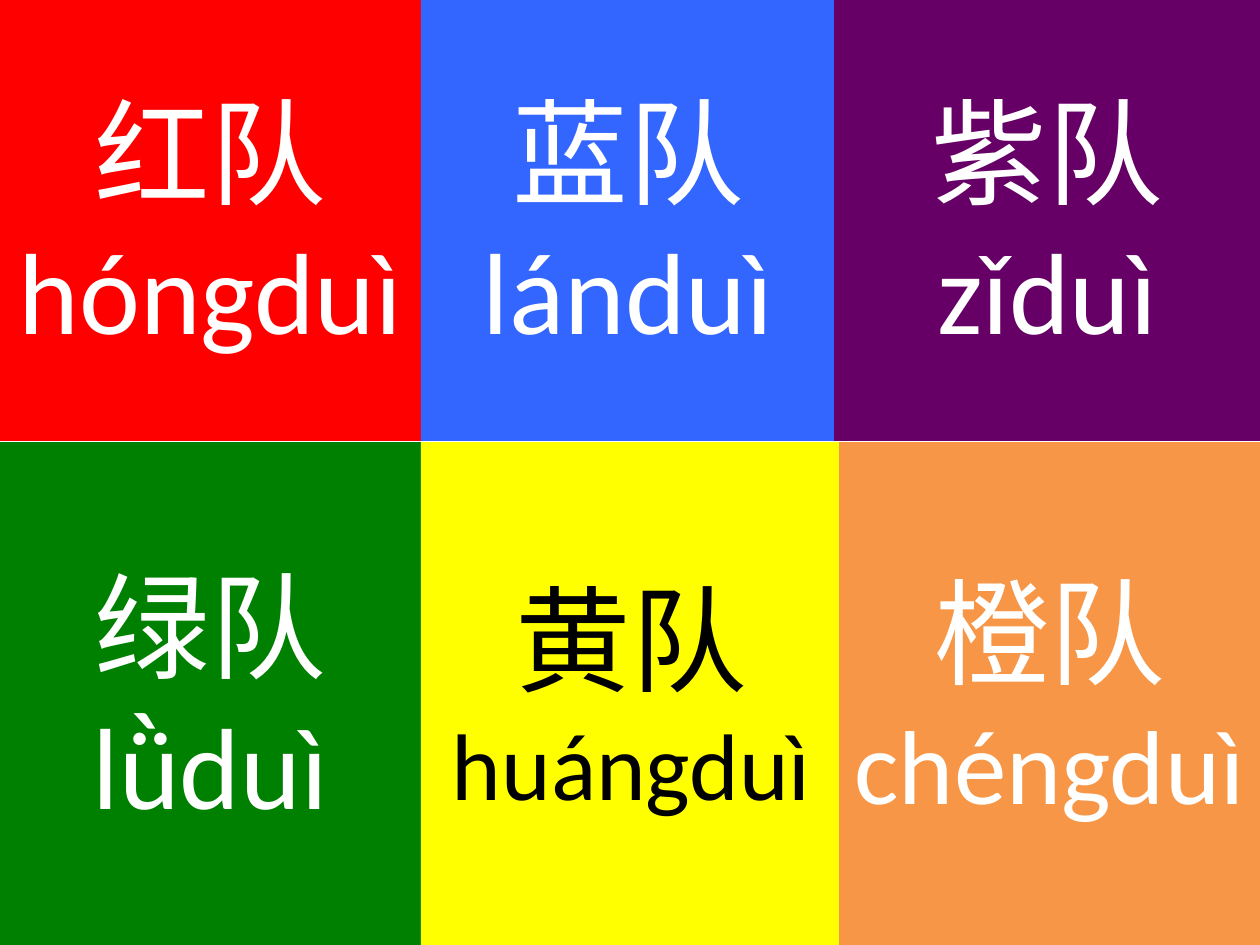
from pptx import Presentation
from pptx.dml.color import RGBColor
from pptx.enum.shapes import MSO_SHAPE
from pptx.enum.text import MSO_ANCHOR, PP_ALIGN
from pptx.util import Inches, Pt

COLORS = {
    "red": "FF0000",
    "blue": "3366FF",
    "purple": "660066",
    "green": "008000",
    "yellow": "FFFF00",
    "orange": "F79646",
    "white": "FFFFFF",
    "black": "000000",
}
NAME_SIZE = 66
TOP_ROW = (-0.02, 3.52)
BOTTOM_ROW = (3.51, 3.99)
TEAMS = [
    (TOP_ROW, 0, 3.34, "red", "white", "红队", "hóngduì", 66),
    (TOP_ROW, 3.34, 3.29, "blue", "white", "蓝队", "lánduì", 66),
    (TOP_ROW, 6.62, 3.38, "purple", "white", "紫队", "zǐduì", 66),
    (BOTTOM_ROW, 0, 3.34, "green", "white", "绿队", "lǜduì", 66),
    (BOTTOM_ROW, 3.34, 3.34, "yellow", "black", "黄队", "huángduì", 54),
    (BOTTOM_ROW, 6.66, 3.34, "orange", "white", "橙队", "chéngduì", 60),
]


def apply_format(target, values):
    """Set each attribute in values on the target."""
    for name, value in values.items():
        setattr(target, name, value)


def add_line(paragraph, text, size, color):
    """Write one centred line of text in the paragraph."""
    paragraph.alignment = PP_ALIGN.CENTER
    run = paragraph.add_run()
    run.text = text
    apply_format(run.font, {"name": "Calibri", "size": Pt(size)})
    run.font.color.rgb = RGBColor.from_string(COLORS[color])


def add_team_tile(slide, box, fill, text_color, lines):
    """Place a coloured tile with a team name and its pinyin in the box."""
    shape = slide.shapes.add_shape(MSO_SHAPE.RECTANGLE, *map(Inches, box))
    shape.shadow.inherit = False
    shape.fill.solid()
    shape.fill.fore_color.rgb = RGBColor.from_string(COLORS[fill])
    shape.line.fill.background()
    frame = shape.text_frame
    apply_format(frame, {"word_wrap": True, "vertical_anchor": MSO_ANCHOR.MIDDLE})
    for index, (text, size) in enumerate(lines):
        paragraph = frame.add_paragraph() if index else frame.paragraphs[0]
        add_line(paragraph, text, size, text_color)


def main():
    """Build the slide of six team tiles and save it."""
    presentation = Presentation()
    apply_format(
        presentation, {"slide_width": Inches(10), "slide_height": Inches(7.5)}
    )
    slide = presentation.slides.add_slide(presentation.slide_layouts[6])
    for (top, height), left, width, fill, text_color, name, pinyin, size in TEAMS:
        lines = [(name, NAME_SIZE), (pinyin, size)]
        add_team_tile(slide, (left, top, width, height), fill, text_color, lines)
    presentation.save("out.pptx")


if __name__ == "__main__":
    main()
